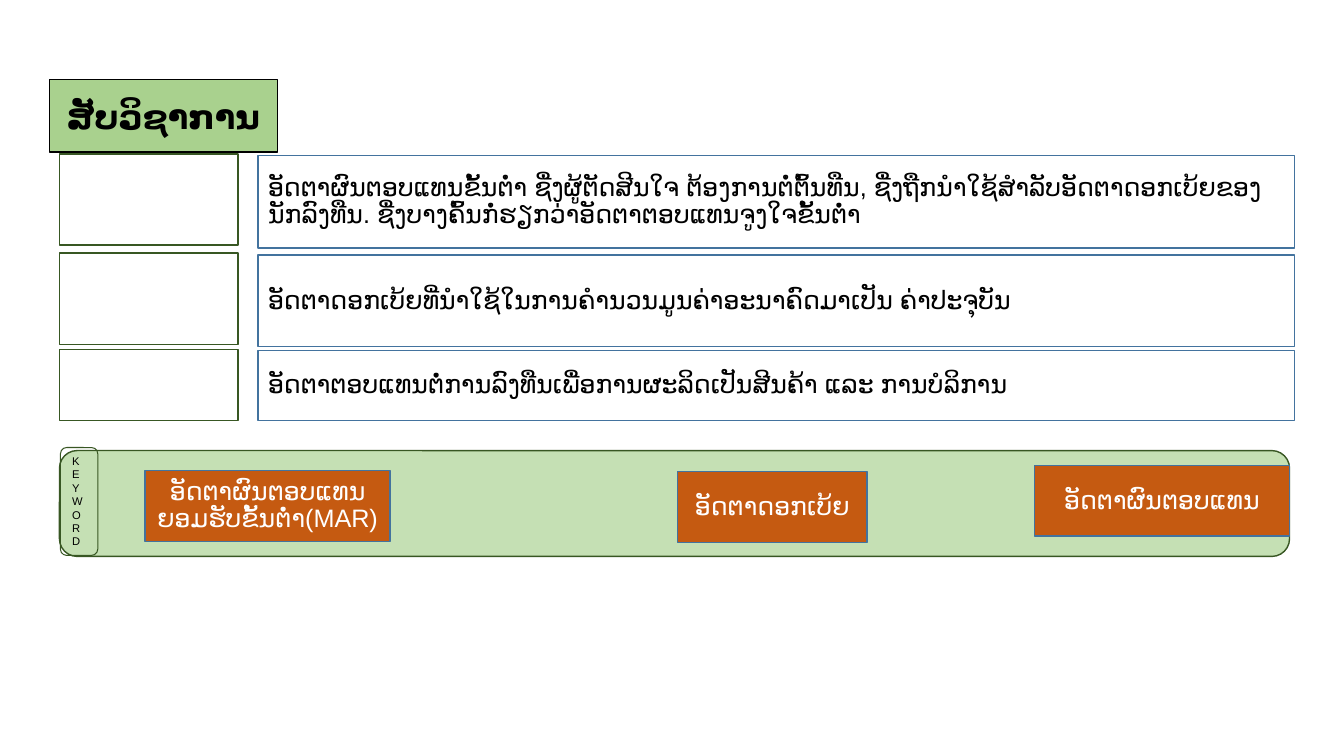
"""Build the Lao vocabulary slide with definitions and a keyword bank."""
from dataclasses import dataclass

import pptx
import pptx.dml.color
import pptx.enum.shapes
import pptx.enum.text
import pptx.oxml
import pptx.oxml.ns
import pptx.util
from pptx.util import Inches

COLORS = {
    "black": "000000", "white": "FFFFFF", "scroll": "A9D18E", "bank": "C5E0B4",
    "keyword": "C55A11", "green": "385723", "blue": "43739E", "outline": "2F5597",
}
SHAPES = pptx.enum.shapes.MSO_SHAPE
ALIGN = pptx.enum.text.PP_ALIGN
ANCHOR = pptx.enum.text.MSO_ANCHOR
AUTO_SIZE = pptx.enum.text.MSO_AUTO_SIZE
DRAWING_NS = pptx.oxml.ns.nsdecls("a")


@dataclass
class Box:
    """A bordered shape with its place, colours and text."""
    left: float
    top: float
    width: float
    height: float
    fill: str | None
    border: str
    text: str = ""
    color: str = "black"
    align: ALIGN = ALIGN.LEFT
    anchor: ANCHOR = ANCHOR.MIDDLE
    size: float = 18
    spacing: float = 0.9
    border_width: float = 1
    geometry: SHAPES = SHAPES.RECTANGLE


def rgb(name: str) -> pptx.dml.color.RGBColor:
    """Return the named colour."""
    return pptx.dml.color.RGBColor.from_string(COLORS[name])


def paint(shape, fill: str | None, border: str, width: float) -> None:
    """Set fill and border."""
    if fill:
        shape.fill.solid()
        shape.fill.fore_color.rgb = rgb(fill)
    else:
        shape.fill.background()
    shape.line.color.rgb = rgb(border)
    shape.line.width = pptx.util.Pt(width)


def write(frame, text: str, size: float, color: str, align: ALIGN, spacing: float) -> None:
    """Write the text and format each run, including its Lao script font."""
    frame.word_wrap = True
    frame.text = text
    for paragraph in frame.paragraphs:
        paragraph.alignment = align
        paragraph.line_spacing = spacing
        for run in paragraph.runs:
            run.font.size = pptx.util.Pt(size)
            run.font.name = "Arial"
            run.font.color.rgb = rgb(color)
            run._r.get_or_add_rPr().append(
                pptx.oxml.parse_xml(f'<a:cs {DRAWING_NS} typeface="Arial"/>'))


def draw_box(slide, box: Box):
    """Draw one box and return its shape."""
    shape = slide.shapes.add_shape(
        box.geometry, Inches(box.left), Inches(box.top), Inches(box.width), Inches(box.height))
    shape.shadow.inherit = False
    paint(shape, box.fill, box.border, box.border_width)
    if box.text:
        shape.text_frame.vertical_anchor = box.anchor
        write(shape.text_frame, box.text, box.size, box.color, box.align, box.spacing)
    return shape


def draw_heading(slide) -> None:
    """Shape the title placeholder as a scroll with outlined text."""
    heading = slide.shapes.title
    heading.left, heading.top = Inches(0.49), Inches(0.79)
    heading.width, heading.height = Inches(2.26), Inches(0.72)
    heading.element.spPr.append(pptx.oxml.parse_xml(
        f'<a:prstGeom {DRAWING_NS} prst="horizontalScroll"><a:avLst/></a:prstGeom>'))
    paint(heading, "scroll", "black", 1)
    frame = heading.text_frame
    write(frame, "ສັບວິຊາການ", 24, "black", ALIGN.CENTER, 1)
    frame.auto_size = AUTO_SIZE.NONE
    frame.vertical_anchor = ANCHOR.MIDDLE
    run = frame.paragraphs[0].runs[0]
    run.font.bold = True
    run._r.get_or_add_rPr().insert(0, pptx.oxml.parse_xml(
        f'<a:ln {DRAWING_NS} w="9525"><a:solidFill>'
        f'<a:srgbClr val="{COLORS["outline"]}"/></a:solidFill></a:ln>'))


def main() -> None:
    """Build and save the slide."""
    deck = pptx.Presentation()
    deck.slide_width, deck.slide_height = Inches(13.33), Inches(7.5)
    slide = deck.slides.add_slide(deck.slide_layouts[5])
    draw_heading(slide)

    answers = [Box(0.59, top, 1.77, height, "white", "green")
               for top, height in ((1.53, 0.9), (2.51, 0.91), (3.47, 0.7))]
    definitions = [Box(2.56, top, 10.28, height, "white", "blue", text) for top, height, text in (
        (1.54, 0.92, "ອັດຕາຜົນຕອບແທນຂັ້ນຕໍ່າ ຊື່ງຜູ້ຕັດສີນໃຈ ຕ້ອງການຕໍ່ຕົ້ນທືນ, "
         "ຊື່ງຖືກນຳໃຊ້ສຳລັບອັດຕາດອກເບ້ຍຂອງນັກລົງທືນ. "
         "ຊື່ງບາງຄົ້ນກໍ່ຮຽກວ່າອັດຕາຕອບແທນຈູງໃຈຂັ້ນຕໍ່າ"),
        (2.53, 0.91, "ອັດຕາດອກເບ້ຍທີ່ນຳໃຊ້ໃນການຄຳນວນມູນຄ່າອະນາຄົດມາເປັນ ຄ່າປະຈຸບັນ"),
        (3.48, 0.69, "ອັດຕາຕອບແທນຕໍ່ການລົງທືນເພື່ອການຜະລິດເປັນສີນຄ້າ ແລະ ການບໍລິການ"),
    )]
    bank = Box(0.59, 4.47, 12.2, 1.05, "bank", "green", geometry=SHAPES.ROUNDED_RECTANGLE)
    keywords = [
        Box(left, top, width, 0.7, "keyword", "blue", text, "white", ALIGN.CENTER)
        for left, top, width, text in (
            (1.44, 4.67, 2.43, "ອັດຕາຜົນຕອບແທນຍອມຮັບຂັ້ນຕໍ່າ(MAR)"),
            (6.72, 4.68, 1.88, "ອັດຕາດອກເບ້ຍ"),
            (10.26, 4.62, 2.53, "ອັດຕາຜົນຕອບແທນ"),
        )]
    for box in (*answers, *definitions, bank, *keywords):
        draw_box(slide, box)

    bank_label = draw_box(slide, Box(
        0.6, 4.44, 0.37, 1.07, None, "green", "\n".join("KEYWORD"), anchor=ANCHOR.TOP,
        size=8, spacing=1, border_width=0.75, geometry=SHAPES.ROUNDED_RECTANGLE))
    bank_label.text_frame.auto_size = AUTO_SIZE.SHAPE_TO_FIT_TEXT
    deck.save("out.pptx")


if __name__ == "__main__":
    main()
